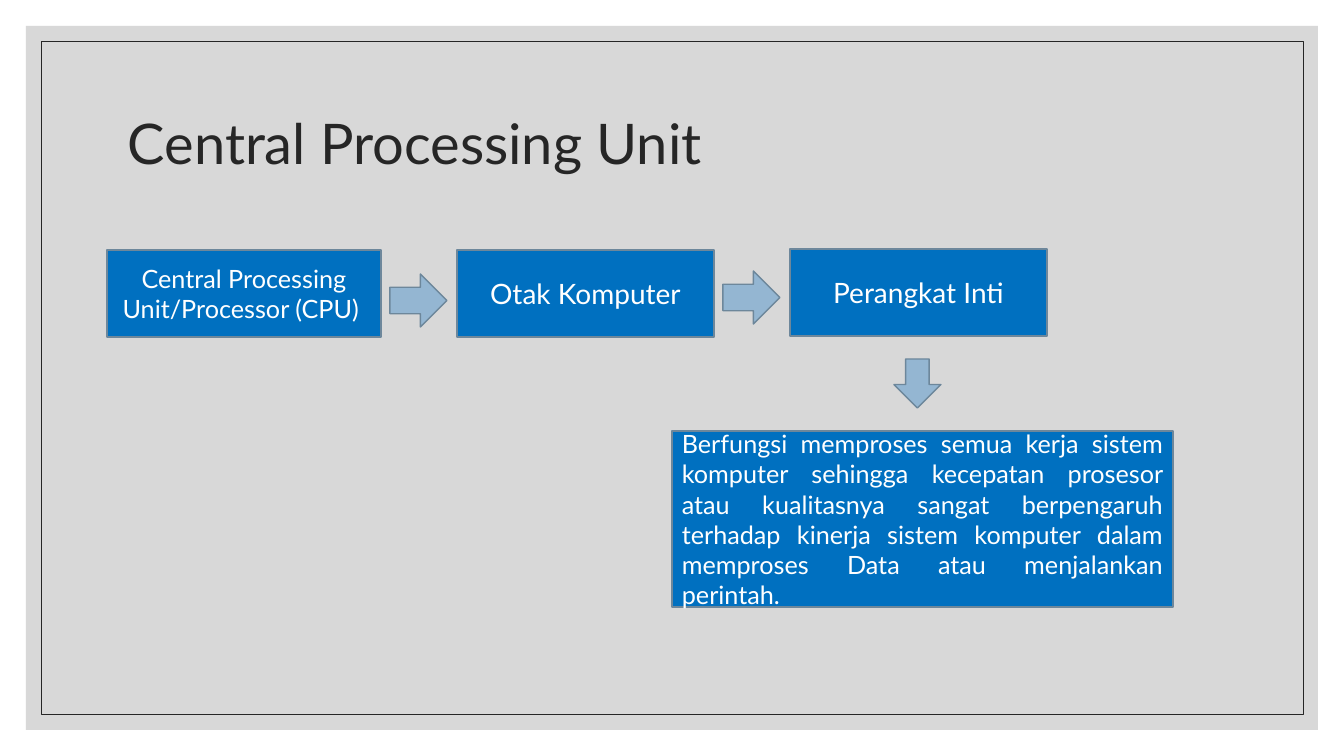
from lxml.etree import SubElement
from pptx import Presentation
from pptx.dml.color import RGBColor
from pptx.enum.shapes import MSO_SHAPE as Preset
from pptx.enum.text import MSO_ANCHOR as Anchor, PP_ALIGN as Align
from pptx.oxml.ns import qn
from pptx.util import Emu, Pt

WHITE = RGBColor(0xFF, 0xFF, 0xFF)
GREY = RGBColor(0xBF, 0xBF, 0xBF)
INK = RGBColor(0x26, 0x26, 0x26)
BLUE = RGBColor(0x00, 0x70, 0xC0)
PALE_BLUE = RGBColor(0x94, 0xB6, 0xD2)
EDGE = RGBColor(0x6D, 0x87, 0x9B)


def px(count):
    return Emu(round(count * 914400 / 100.8))


class Painter:
    font = "Lato"

    def __init__(self, page):
        self.page = page

    def shape(self, preset, place, fill=None, line=None, width=1):
        shape = self.page.shapes.add_shape(preset, *map(px, place))
        shape.shadow.inherit = False
        if fill is None:
            shape.fill.background()
        else:
            shape.fill.solid()
            shape.fill.fore_color.rgb = fill
        if line is None:
            shape.line.fill.background()
        else:
            shape.line.color.rgb = line
            shape.line.width = Pt(width)
        return shape

    def panel(self, place, fill, opacity):
        panel = self.shape(Preset.RECTANGLE, place, fill)
        color = panel.element.spPr.find(".//" + qn("a:srgbClr"))
        SubElement(color, qn("a:alpha"), val=str(opacity * 1000))

    def set_text(self, shape, text, size, color, align):
        frame = shape.text_frame
        frame.word_wrap = True
        frame.vertical_anchor = Anchor.MIDDLE
        para = frame.paragraphs[0]
        para.text = text
        para.alignment = align
        para.font.name = self.font
        para.font.size = Pt(size)
        para.font.color.rgb = color
        return para

    def title(self, place, text):
        box = self.page.shapes.add_textbox(*map(px, place))
        para = self.set_text(box, text, 40, INK, Align.LEFT)
        para.line_spacing = 0.9

    def box(self, place, text, size, align=Align.CENTER):
        box = self.shape(Preset.RECTANGLE, place, BLUE, EDGE)
        self.set_text(box, text, size, WHITE, align)

    def arrow(self, preset, place):
        self.shape(preset, place, PALE_BLUE, EDGE)


def main():
    deck = Presentation()
    deck.slide_width, deck.slide_height = px(1344), px(756)
    painter = Painter(deck.slides.add_slide(deck.slide_layouts[6]))

    painter.panel((26, 26, 1292, 704), GREY, 60)
    painter.shape(Preset.RECTANGLE, (41, 41, 1262, 673), line=INK, width=0.5)
    painter.title((118, 71, 1109, 151), "Central Processing Unit")

    for left, top, width, text, size in (
        (107, 250, 274, "Central Processing Unit/Processor (CPU) ", 18),
        (457, 250, 257, "Otak Komputer", 20),
        (790, 249, 257, "Perangkat Inti", 20),
    ):
        painter.box((left, top, width, 87), text, size)

    for left, top in ((390, 274), (723, 271)):
        painter.arrow(Preset.RIGHT_ARROW, (left, top, 57, 53))
    painter.arrow(Preset.DOWN_ARROW, (894, 359, 47, 49))

    painter.box(
        (672, 431, 501, 176),
        "Berfungsi memproses semua kerja sistem komputer sehingga kecepatan "
        "prosesor atau kualitasnya sangat berpengaruh terhadap kinerja sistem "
        "komputer dalam memproses Data atau menjalankan perintah.",
        18,
        Align.JUSTIFY,
    )
    deck.save("out.pptx")


if __name__ == "__main__":
    main()
